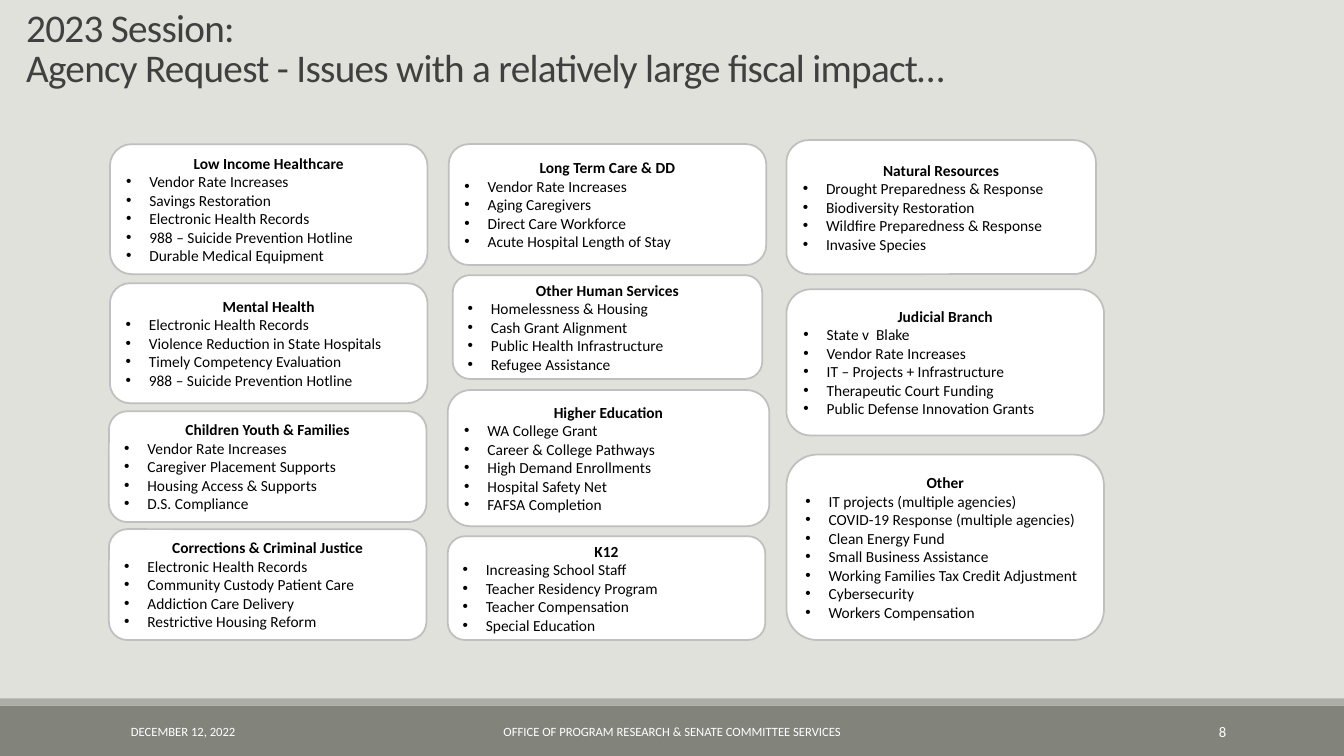
from dataclasses import dataclass

from lxml import etree
from pptx import Presentation
from pptx.dml.color import RGBColor
from pptx.enum.shapes import MSO_SHAPE
from pptx.enum.text import MSO_ANCHOR, MSO_AUTO_SIZE, PP_ALIGN
from pptx.oxml.ns import qn
from pptx.util import Pt

RECTANGLE, ROUNDED = MSO_SHAPE.RECTANGLE, MSO_SHAPE.ROUNDED_RECTANGLE
LEFT, CENTER, RIGHT = PP_ALIGN.LEFT, PP_ALIGN.CENTER, PP_ALIGN.RIGHT
MIDDLE, BOTTOM = MSO_ANCHOR.MIDDLE, MSO_ANCHOR.BOTTOM
NO_AUTO_SIZE = MSO_AUTO_SIZE.NONE

EMU_PER_PX = 9144  # 100 px to the inch
SLIDE_WIDTH, SLIDE_HEIGHT = 1333, 750
BULLET_INDENT = 23
TITLE_ONLY = 5


@dataclass(frozen=True)
class Theme:
    font: str = "Calibri"
    background: str = "E1E1DB"
    footer_band: str = "82847C"
    footer_rule: str = "ACADA8"
    title: str = "404040"
    body: str = "000000"
    light: str = "FFFFFF"
    outline: str = "BFBFBF"
    title_size: float = 28
    body_size: float = 11
    number_size: float = 10.5
    footer_size: float = 9
    outline_width: float = 1.25


THEME = Theme()

TITLE_LINES = [
    "2023 Session:",
    "Agency Request - Issues with a relatively large fiscal impact…",
]

# Each panel: left, top, width, height, heading, issues
PANELS = [
    # Left column
    (109, 143, 315, 129, "Low Income Healthcare", [
        "Vendor Rate Increases", "Savings Restoration", "Electronic Health Records",
        "988 – Suicide Prevention Hotline", "Durable Medical Equipment"]),
    (109, 281, 315, 119, "Mental Health", [
        "Electronic Health Records", "Violence Reduction in State Hospitals",
        "Timely Competency Evaluation", "988 – Suicide Prevention Hotline"]),
    (108, 408, 315, 110, "Children Youth & Families", [
        "Vendor Rate Increases", "Caregiver Placement Supports",
        "Housing Access & Supports", "D.S. Compliance"]),
    (108, 525, 315, 110, "Corrections & Criminal Justice", [
        "Electronic Health Records", "Community Custody Patient Care",
        "Addiction Care Delivery", "Restrictive Housing Reform"]),
    # Middle column
    (445, 143, 315, 120, "Long Term Care & DD", [
        "Vendor Rate Increases", "Aging Caregivers", "Direct Care Workforce",
        "Acute Hospital Length of Stay"]),
    (449, 273, 307, 103, "Other Human Services", [
        "Homelessness & Housing", "Cash Grant Alignment",
        "Public Health Infrastructure", "Refugee Assistance"]),
    (444, 387, 319, 135, "Higher Education", [
        "WA College Grant", "Career & College Pathways", "High Demand Enrollments",
        "Hospital Safety Net", "FAFSA Completion"]),
    (444, 532, 315, 103, "K12", [
        "Increasing School Staff", "Teacher Residency Program",
        "Teacher Compensation", "Special Education"]),
    # Right column
    (780, 139, 307, 133, "Natural Resources", [
        "Drought Preparedness & Response", "Biodiversity Restoration",
        "Wildfire Preparedness & Response", "Invasive Species"]),
    (780, 287, 315, 145, "Judicial Branch", [
        "State v  Blake", "Vendor Rate Increases", "IT – Projects + Infrastructure",
        "Therapeutic Court Funding", "Public Defense Innovation Grants"]),
    (780, 451, 315, 184, "Other", [
        "IT projects (multiple agencies)", "COVID-19 Response (multiple agencies)",
        "Clean Energy Fund", "Small Business Assistance",
        "Working Families Tax Credit Adjustment", "Cybersecurity",
        "Workers Compensation"]),
]

# Each footer text: left, width, text, size, alignment
FOOTER_TEXTS = [
    (120, 270, "DECEMBER 12, 2022", THEME.footer_size, LEFT),
    (403, 527, "OFFICE OF PROGRAM RESEARCH & SENATE COMMITTEE SERVICES",
     THEME.footer_size, CENTER),
    (1083, 143, "8", THEME.number_size, RIGHT),
]


def px(length):
    return length * EMU_PER_PX


def box(*lengths):
    return [px(length) for length in lengths]


def rgb(color):
    return RGBColor.from_string(color)


def write(paragraph, text, *, size=THEME.body_size, color=THEME.body, bold=False,
          align=LEFT, spacing=None):
    """Add formatted text to a paragraph; spacing is in hundredths of a point."""
    paragraph.alignment = align
    run = paragraph.add_run()
    run.text = text
    font = run.font
    font.name, font.size, font.bold = THEME.font, Pt(size), bold
    font.color.rgb = rgb(color)
    if spacing is not None:
        font._element.set("spc", str(spacing))


def add_bullet(paragraph):
    properties = paragraph._p.get_or_add_pPr()
    properties.set("marL", str(px(BULLET_INDENT)))
    properties.set("indent", str(px(-BULLET_INDENT)))
    etree.SubElement(properties, qn("a:buFont"), typeface="Arial")
    etree.SubElement(properties, qn("a:buChar"), char="•")


def add_block(slide, kind, bounds, fill, outline=None):
    shape = slide.shapes.add_shape(kind, *box(*bounds))
    shape.shadow.inherit = False
    shape.fill.solid()
    shape.fill.fore_color.rgb = rgb(fill)
    if outline:
        shape.line.color.rgb = rgb(outline)
        shape.line.width = Pt(THEME.outline_width)
    else:
        shape.line.fill.background()
    return shape


def add_panel(slide, left, top, width, height, heading, issues):
    panel = add_block(slide, ROUNDED, (left, top, width, height),
                      THEME.light, THEME.outline)
    frame = panel.text_frame
    frame.word_wrap = True
    frame.vertical_anchor = MIDDLE
    write(frame.paragraphs[0], heading, bold=True, align=CENTER)
    for issue in issues:
        paragraph = frame.add_paragraph()
        write(paragraph, issue)
        add_bullet(paragraph)


def add_title(slide):
    title = slide.shapes.title
    title.left, title.top, title.width, title.height = box(16, 43, 938, 52)
    frame = title.text_frame
    frame.auto_size = NO_AUTO_SIZE
    frame.word_wrap = True
    frame.vertical_anchor = BOTTOM
    paragraph = frame.paragraphs[0]
    paragraph.line_spacing = 0.85
    for index, line in enumerate(TITLE_LINES):
        if index:
            paragraph.add_line_break()
        write(paragraph, line, size=THEME.title_size, color=THEME.title, spacing=-50)


def add_footer(slide):
    add_block(slide, RECTANGLE, (0, 700, SLIDE_WIDTH, 50), THEME.footer_band)
    add_block(slide, RECTANGLE, (0, 693, SLIDE_WIDTH, 7), THEME.footer_rule)
    for left, width, text, size, align in FOOTER_TEXTS:
        frame = slide.shapes.add_textbox(*box(left, 706, width, 40)).text_frame
        frame.word_wrap = True
        frame.vertical_anchor = MIDDLE
        write(frame.paragraphs[0], text, size=size, color=THEME.light, align=align)


def main():
    presentation = Presentation()
    presentation.slide_width, presentation.slide_height = box(SLIDE_WIDTH, SLIDE_HEIGHT)
    slide = presentation.slides.add_slide(presentation.slide_layouts[TITLE_ONLY])
    slide.background.fill.solid()
    slide.background.fill.fore_color.rgb = rgb(THEME.background)

    add_title(slide)
    add_footer(slide)
    for panel in PANELS:
        add_panel(slide, *panel)
    presentation.save("out.pptx")


if __name__ == "__main__":
    main()
